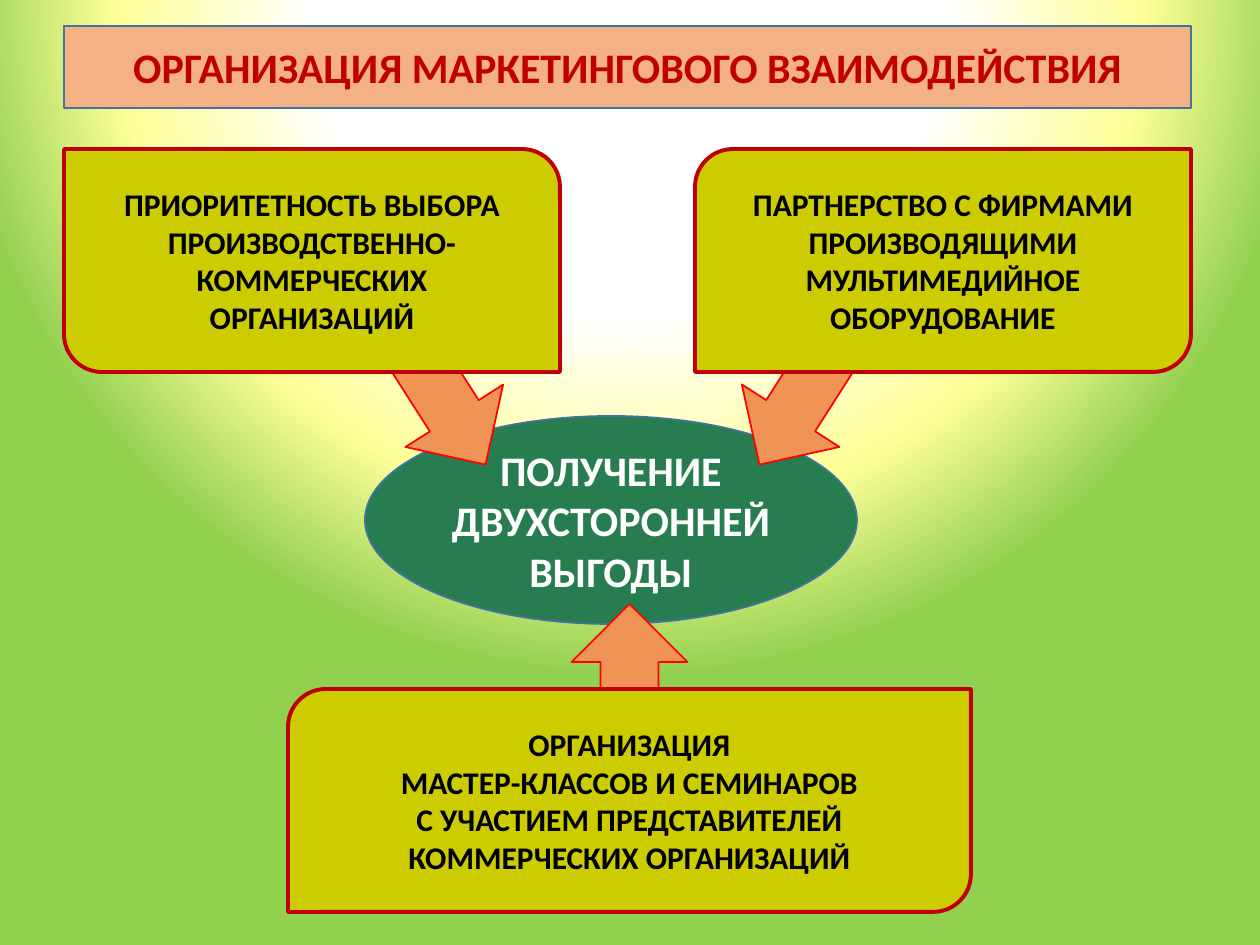
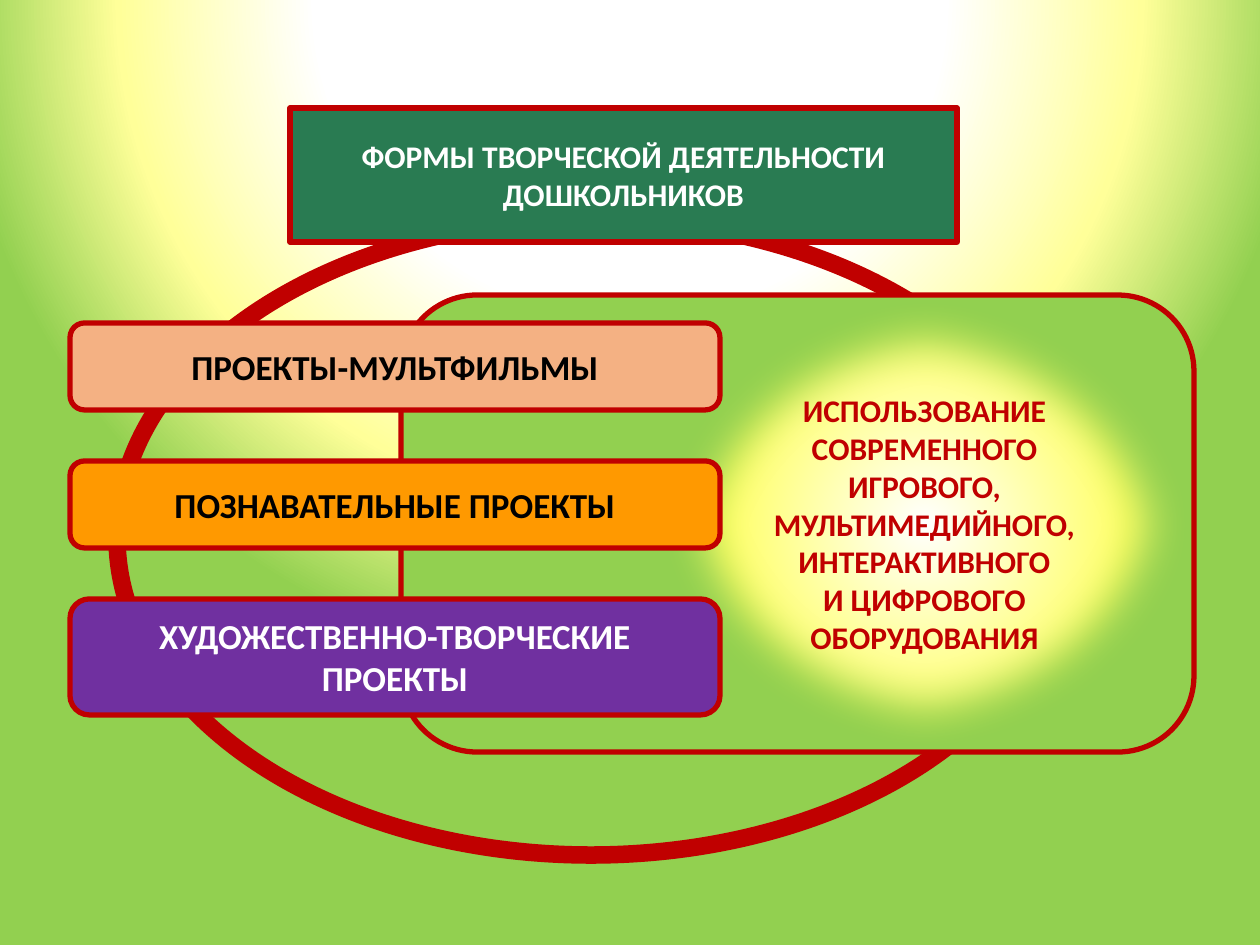
import dataclasses
import pptx
import pptx.dml.color
import pptx.enum.shapes
import pptx.enum.text
import pptx.oxml
import pptx.oxml.ns
import pptx.util
from lxml import etree

SHAPE = pptx.enum.shapes.MSO_SHAPE
qn = pptx.oxml.ns.qn
SCALE = 914400 / 126
SLIDE_W, SLIDE_H = 1260, 945


@dataclasses.dataclass(frozen=True)
class Theme:
    font: str = "Calibri"
    heading: int = 24
    bar: int = 20
    body: int = 18
    red: str = "C00000"
    arrow_red: str = "FF0000"
    blue: str = "43739E"
    peach: str = "F4B183"
    coral: str = "F09456"
    olive: str = "CCCC00"
    lime: str = "92D050"
    green: str = "287D50"
    header_green: str = "297B52"
    orange: str = "FF9900"
    purple: str = "7030A0"
    black: str = "000000"
    white: str = "FFFFFF"
    pale_yellow: str = "FFFF99"
    yellow: str = "FFFF66"
    thin: float = 1
    card_line: float = 2.25
    thick: float = 3
    ring: float = 10
    soft_edge: float = 25


T = Theme()


def px(v):
    return pptx.util.Emu(round(v * SCALE))


def rgb(value):
    return pptx.dml.color.RGBColor.from_string(value)


def place(sp, box):
    sp.left, sp.top, sp.width, sp.height = map(px, box)


def paint(sp, fill, line, width):
    if fill:
        sp.fill.solid()
        sp.fill.fore_color.rgb = rgb(fill)
    else:
        sp.fill.background()
    sp.line.color.rgb = rgb(line)
    sp.line.width = pptx.util.Pt(width)


def write(sp, lines, size, color):
    tf = sp.text_frame
    tf.word_wrap = True
    tf.auto_size = pptx.enum.text.MSO_AUTO_SIZE.NONE
    tf.vertical_anchor = pptx.enum.text.MSO_ANCHOR.MIDDLE
    for i, text in enumerate(lines):
        p = tf.add_paragraph() if i else tf.paragraphs[0]
        p.alignment = pptx.enum.text.PP_ALIGN.CENTER
        r = p.add_run()
        r.text = text
        r.font.name = T.font
        r.font.size = pptx.util.Pt(size)
        r.font.bold = True
        r.font.color.rgb = rgb(color)


def add_box(s, kind, box, fill, line, width):
    sp = s.shapes.add_shape(kind, *map(px, box))
    sp.shadow.inherit = False
    paint(sp, fill, line, width)
    return sp


def radial(fill, element, stops, focus):
    fill.gradient()
    grad = element.find(".//" + qn("a:gradFill"))
    for child in list(grad):
        grad.remove(child)
    gs_list = etree.SubElement(grad, qn("a:gsLst"))
    for pos, color in stops:
        gs = etree.SubElement(gs_list, qn("a:gs"), pos=str(pos * 1000))
        etree.SubElement(gs, qn("a:srgbClr"), val=color)
    circle = etree.SubElement(grad, qn("a:path"), {"path": "circle"})
    sides = {side: str(v * 1000) for side, v in zip("ltrb", focus)}
    etree.SubElement(circle, qn("a:fillToRect"), sides)


def add_title(s, box, text, size, color, fill, line, width):
    sp = s.shapes.title
    place(sp, box)
    geom = etree.SubElement(sp._element.spPr, qn("a:prstGeom"), prst="roundRect")
    etree.SubElement(geom, qn("a:avLst"))
    paint(sp, fill, line, width)
    write(sp, [text], size, color)
    s.shapes._spTree.append(sp._element)


def add_goal(s, box):
    sp = add_box(s, SHAPE.OVAL, box, T.green, T.blue, T.thin)
    write(sp, ["ПОЛУЧЕНИЕ ДВУХСТОРОННЕЙ ВЫГОДЫ"], T.heading, T.white)


def add_arrows(s, box):
    x, y, w, h = box
    arrow_w, arrow_h = 116, 132
    right = w - arrow_w
    for dx, dy, angle in ((0, 0, -32.6), (right, 0, 32.6), (right / 2 + 7, h - arrow_h, 180)):
        sp = add_box(s, SHAPE.DOWN_ARROW, (x + dx, y + dy, arrow_w, arrow_h),
                     T.coral, T.arrow_red, T.thin)
        sp.rotation = angle


def add_card(s, box, lines, corners):
    sp = add_box(s, SHAPE.ROUND_2_DIAG_RECTANGLE, box, T.olive, T.red, T.card_line)
    for i, corner in enumerate(corners):
        sp.adjustments[i] = corner
    write(sp, lines, T.body, T.black)


def add_cards(s, box):
    x, y, w, h = box
    card_w, card_h, wide_w = 496, 223, 683
    falling, rising = (0.17, 0), (0, 0.17)
    add_card(s, (x, y, card_w, card_h),
             ["ПРИОРИТЕТНОСТЬ ВЫБОРА ПРОИЗВОДСТВЕННО-КОММЕРЧЕСКИХ", "ОРГАНИЗАЦИЙ"], rising)
    add_card(s, (x + w - card_w, y, card_w, card_h),
             ["ПАРТНЕРСТВО С ФИРМАМИ ПРОИЗВОДЯЩИМИ МУЛЬТИМЕДИЙНОЕ ОБОРУДОВАНИЕ"], falling)
    add_card(s, (x + (w - wide_w) / 2 + 2, y + h - card_h, wide_w, card_h),
             ["ОРГАНИЗАЦИЯ", "МАСТЕР-КЛАССОВ И СЕМИНАРОВ",
              "С УЧАСТИЕМ ПРЕДСТАВИТЕЛЕЙ КОММЕРЧЕСКИХ ОРГАНИЗАЦИЙ"], falling)


def add_equipment(s, box):
    x, y, w, h = box
    add_box(s, SHAPE.ROUNDED_RECTANGLE, box, T.lime, T.red, T.thick)
    glow_w = 539
    sp = add_box(s, SHAPE.OVAL, (x + w - glow_w, y, glow_w, h), None, T.blue, T.thin)
    radial(sp.fill, sp._element, ((0, T.white), (57, T.yellow)), (50, 50, 50, 50))
    effects = sp._element.spPr.find(qn("a:effectLst"))
    etree.SubElement(effects, qn("a:softEdge"), rad=str(pptx.util.Pt(T.soft_edge)))
    write(sp, ["ИСПОЛЬЗОВАНИЕ", "СОВРЕМЕННОГО ИГРОВОГО,", "МУЛЬТИМЕДИЙНОГО,",
               "ИНТЕРАКТИВНОГО", "И ЦИФРОВОГО", "ОБОРУДОВАНИЯ"], T.body, T.red)


def add_projects(s, box):
    x, y, w, h = box
    gap, row_h = 51, 87
    last_h = h - 2 * (row_h + gap)
    projects = (("ПРОЕКТЫ-МУЛЬТФИЛЬМЫ", T.peach, T.black, row_h),
                ("ПОЗНАВАТЕЛЬНЫЕ ПРОЕКТЫ", T.orange, T.black, row_h),
                ("ХУДОЖЕСТВЕННО-ТВОРЧЕСКИЕ ПРОЕКТЫ", T.purple, T.white, last_h))
    for i, (text, fill, color, bar_h) in enumerate(projects):
        sp = add_box(s, SHAPE.ROUNDED_RECTANGLE, (x, y + i * (row_h + gap), w, bar_h),
                     fill, T.red, T.thick)
        write(sp, [text], T.bar, color)


def build_interaction(s):
    add_goal(s, (365, 416, 492, 208))
    add_arrows(s, (392, 343, 461, 393))
    add_cards(s, (64, 149, 1127, 763))
    add_title(s, (64, 26, 1127, 82), "ОРГАНИЗАЦИЯ МАРКЕТИНГОВОГО ВЗАИМОДЕЙСТВИЯ",
              T.heading, T.red, T.peach, T.blue, T.thin)


def build_creative_forms(s):
    add_box(s, SHAPE.OVAL, (117, 219, 948, 636), None, T.red, T.ring)
    add_equipment(s, (401, 295, 793, 457))
    add_projects(s, (70, 323, 650, 392))
    add_title(s, (290, 108, 667, 134), "ФОРМЫ ТВОРЧЕСКОЙ ДЕЯТЕЛЬНОСТИ ДОШКОЛЬНИКОВ",
              T.body, T.white, T.header_green, T.red, T.thick)


def main():
    prs = pptx.Presentation()
    prs.slide_width, prs.slide_height = px(SLIDE_W), px(SLIDE_H)
    master = prs.slide_master
    radial(master.background.fill, master._element,
           ((40, T.white), (65, T.pale_yellow), (86, T.lime)), (50, -80, 50, 180))
    for build in (build_interaction, build_creative_forms):
        build(prs.slides.add_slide(prs.slide_layouts.get_by_name("Title Only")))
    prs.save("out.pptx")


if __name__ == "__main__":
    main()
